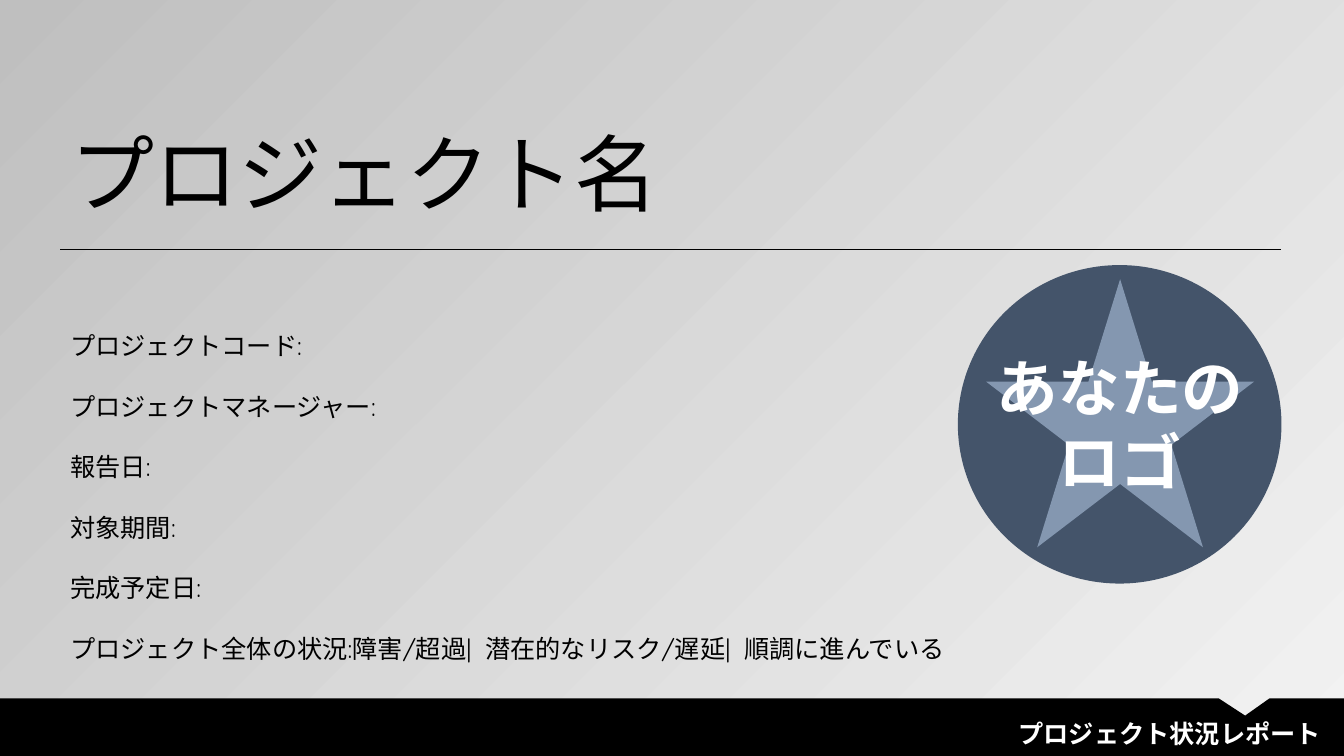
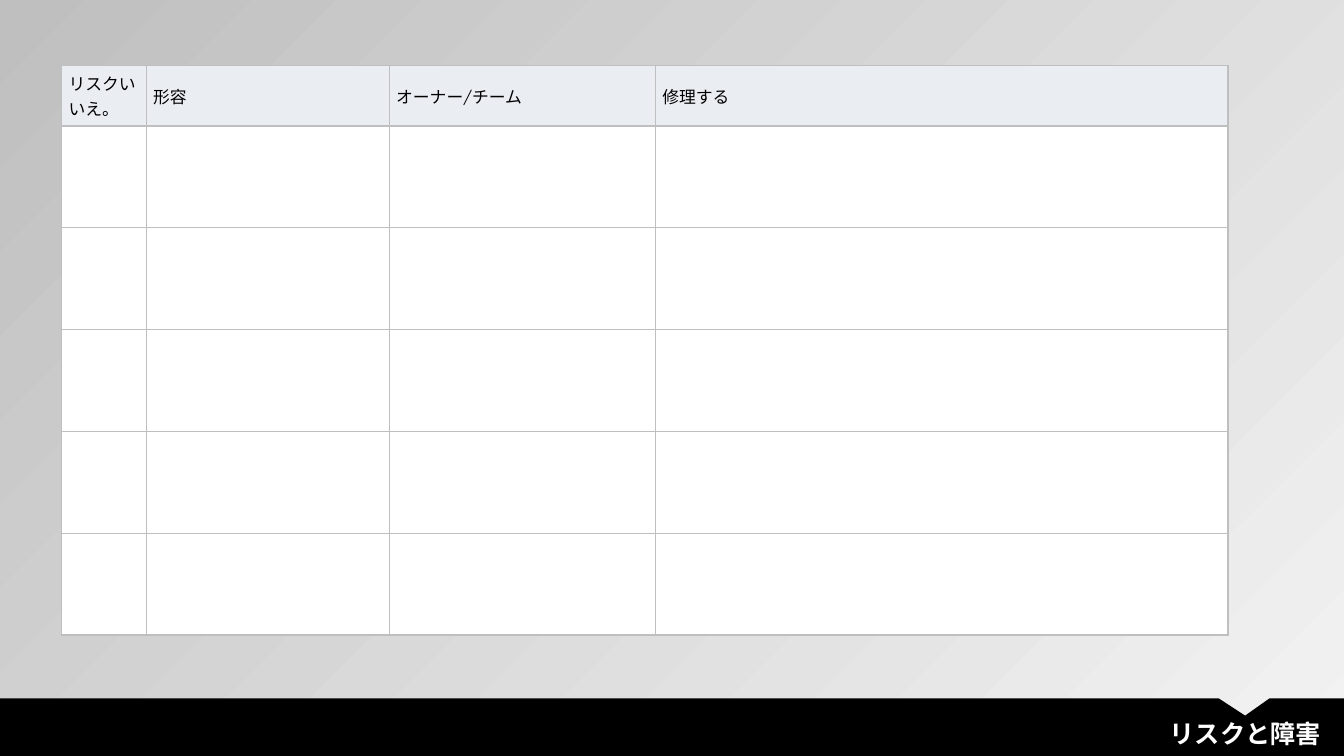
from lxml import etree
from pptx import Presentation
from pptx.dml.color import RGBColor
from pptx.enum.shapes import MSO_CONNECTOR, MSO_SHAPE
from pptx.enum.text import MSO_ANCHOR, MSO_AUTO_SIZE, PP_ALIGN
from pptx.oxml.ns import qn
from pptx.util import Inches, Pt

BLACK = RGBColor(0x00, 0x00, 0x00)
WHITE = RGBColor(0xFF, 0xFF, 0xFF)
PALE_GREY = RGBColor(0xF2, 0xF2, 0xF2)
MID_GREY = RGBColor(0xBF, 0xBF, 0xBF)
NAVY = RGBColor(0x44, 0x54, 0x6A)
STEEL = RGBColor(0x84, 0x97, 0xB0)
HEADER_FILL = RGBColor(0xEA, 0xEE, 0xF3)
FONT = "Quicksand"

LEFT, CENTER, RIGHT = PP_ALIGN.LEFT, PP_ALIGN.CENTER, PP_ALIGN.RIGHT
MIDDLE = MSO_ANCHOR.MIDDLE
GROW = MSO_AUTO_SIZE.SHAPE_TO_FIT_TEXT

SLIDE_WIDTH, SLIDE_HEIGHT = 13.33, 7.5
BAND_TOP = 6.93
NOTCH = [(12.09, BAND_TOP), (12.35, BAND_TOP + 0.17), (12.59, BAND_TOP)]

COVER_FOOTER = "プロジェクト状況レポート"
COVER_TITLE = "プロジェクト名"
PROJECT_FACTS = [
    "プロジェクトコード:",
    "プロジェクトマネージャー:",
    "報告日:",
    "対象期間:",
    "完成予定日:",
    "プロジェクト全体の状況:障害/超過|  潜在的なリスク/遅延|  順調に進んでいる",
]
LOGO_LINES = ["あなたの", "ロゴ"]

RISK_FOOTER = "リスクと障害"
RISK_COLUMNS = [("リスクいいえ。", 0.84), ("形容", 2.41),
                ("オーナー/チーム", 2.64), ("修理する", 5.68)]
RISK_ROWS = 5
HEADER_HEIGHT, ROW_HEIGHT = 0.6, 1.01


def inches(*values):
    return [Inches(value) for value in values]


def style_paragraph(para, size, color, bold=False, align=LEFT):
    para.alignment = align
    for span in para.runs:
        span.font.name = FONT
        span.font.size = Pt(size)
        span.font.bold = bold
        span.font.color.rgb = color


def add_text(shapes, lines, place, size, color, bold=False, align=LEFT, spacing=None):
    box = shapes.add_textbox(*inches(*place))
    frame = box.text_frame
    frame.word_wrap = True
    frame.auto_size = GROW
    frame.text = "\n".join(lines)
    for para in frame.paragraphs:
        style_paragraph(para, size, color, bold, align)
        para.line_spacing = spacing


def paint(shape, color):
    shape.shadow.inherit = False
    shape.fill.solid()
    shape.fill.fore_color.rgb = color
    shape.line.fill.background()


def add_page(deck):
    page = deck.slides.add_slide(deck.slide_layouts[6])
    fill = page.background.fill
    fill.gradient()
    fill.gradient_angle = 135
    for stop, color in zip(fill.gradient_stops, (PALE_GREY, MID_GREY)):
        stop.color.rgb = color
    return page


def add_footer(page, text):
    """Black band with a notch above the right-aligned footer text."""
    corners = NOTCH + [(SLIDE_WIDTH, BAND_TOP), (SLIDE_WIDTH, SLIDE_HEIGHT), (0, SLIDE_HEIGHT)]
    outline = page.shapes.build_freeform(*inches(0, BAND_TOP))
    outline.add_line_segments([inches(*corner) for corner in corners], close=True)
    paint(outline.convert_to_shape(), BLACK)
    add_text(page.shapes, [text], (4.14, 7.08, 9.06, 0.4), 18, WHITE, True, RIGHT)


def add_rule(page):
    rule = page.shapes.add_connector(MSO_CONNECTOR.STRAIGHT, *inches(0.6, 2.47, 12.71, 2.47))
    rule.line.color.rgb = BLACK
    rule.line.width = Pt(0.5)
    etree.SubElement(rule._element.spPr, qn("a:effectLst"))


def add_logo_placeholder(page):
    group = page.shapes.add_group_shape()
    for kind, place, color in [
        (MSO_SHAPE.OVAL, (9.5, 2.63, 3.21, 3.16), NAVY),
        (MSO_SHAPE.STAR_5_POINT, (9.78, 2.77, 2.66, 2.66), STEEL),
    ]:
        paint(group.shapes.add_shape(kind, *inches(*place)), color)
    add_text(group.shapes, LOGO_LINES, (9.78, 3.42, 2.66, 1.58), 44, WHITE, True, CENTER)


def add_borders(cell):
    properties = cell._tc.get_or_add_tcPr()
    for side in ("lnL", "lnR", "lnT", "lnB"):
        line = etree.SubElement(properties, qn(f"a:{side}"), w=str(Pt(1)))
        solid = etree.SubElement(line, qn("a:solidFill"))
        etree.SubElement(solid, qn("a:srgbClr"), val=str(MID_GREY))


def style_cell(cell, fill):
    cell.vertical_anchor = MIDDLE
    cell.margin_left = cell.margin_right = Inches(0.07)
    cell.margin_top = cell.margin_bottom = 0
    add_borders(cell)
    cell.fill.solid()
    cell.fill.fore_color.rgb = fill


def add_risk_table(page):
    width = sum(column_width for _, column_width in RISK_COLUMNS)
    height = HEADER_HEIGHT + RISK_ROWS * ROW_HEIGHT
    table = page.shapes.add_table(RISK_ROWS + 1, len(RISK_COLUMNS),
                                  *inches(0.61, 0.65, width, height)).table
    table.first_row = table.horz_banding = False
    for row in table.rows:
        row.height = Inches(ROW_HEIGHT)
    table.rows[0].height = Inches(HEADER_HEIGHT)
    for index, (heading, column_width) in enumerate(RISK_COLUMNS):
        table.columns[index].width = Inches(column_width)
        table.cell(0, index).text_frame.text = heading
        style_paragraph(table.cell(0, index).text_frame.paragraphs[0], 12, BLACK)
        for row in range(RISK_ROWS + 1):
            style_cell(table.cell(row, index), WHITE if row else HEADER_FILL)


def build_cover(deck):
    page = add_page(deck)
    add_footer(page, COVER_FOOTER)
    add_text(page.shapes, [COVER_TITLE], (0.6, 1.16, 12.27, 1.11), 60, BLACK)
    add_text(page.shapes, PROJECT_FACTS, (0.6, 2.93, 12.47, 3.64), 18, BLACK, spacing=2.0)
    add_rule(page)
    add_logo_placeholder(page)


def build_risks(deck):
    page = add_page(deck)
    add_risk_table(page)
    add_footer(page, RISK_FOOTER)


def main():
    deck = Presentation()
    deck.slide_width, deck.slide_height = inches(SLIDE_WIDTH, SLIDE_HEIGHT)
    build_cover(deck)
    build_risks(deck)
    deck.save("out.pptx")


if __name__ == "__main__":
    main()
